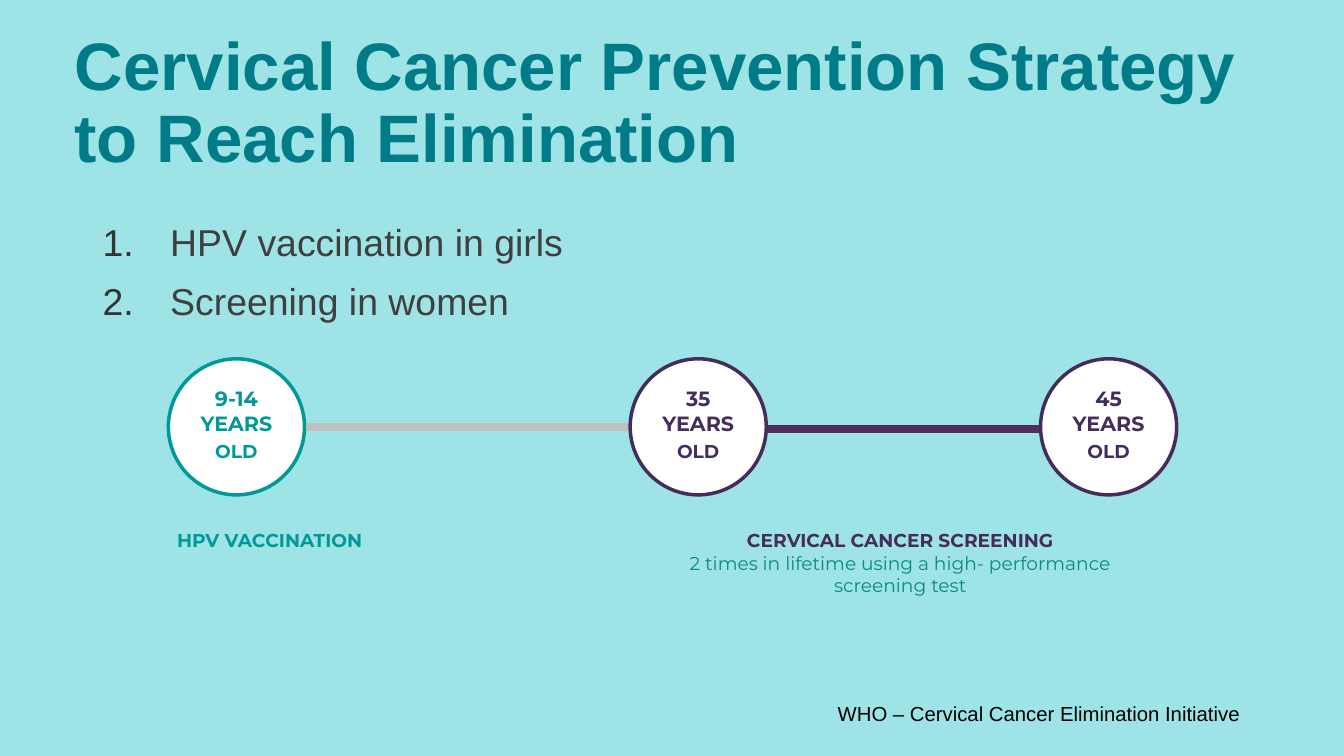
from dataclasses import dataclass

from lxml.etree import SubElement
from pptx import Presentation
from pptx.dml.color import RGBColor
from pptx.enum.shapes import MSO_CONNECTOR as Connector, MSO_SHAPE as Shape
from pptx.enum.text import MSO_ANCHOR as Anchor, PP_ALIGN as Align
from pptx.oxml.ns import qn
from pptx.util import Inches, Pt


@dataclass(frozen=True)
class Theme:
    background: str = "9EE3E5"
    title: str = "007C88"
    body: str = "3F3F3F"
    number: str = "333333"
    vaccination: str = "009999"
    screening: str = "442D5A"
    detail: str = "0B8A83"
    gap_line: str = "BFBFBF"
    screening_line: str = "512E5B"
    white: str = "FFFFFF"
    black: str = "000000"
    sans: str = "Arial"
    display: str = "Montserrat"
    title_size: float = 48
    body_size: float = 26.7
    age_size: float = 14.7
    label_size: float = 13.3
    source_size: float = 14.5


THEME = Theme()


def color(value):
    return RGBColor.from_string(value)


def text_format(name, size, ink, bold=False):
    return {"name": name, "size": Pt(size), "bold": bold, "ink": ink}


def write_lines(frame, lines, **para_format):
    """Fill a frame with (text, font format, extra paragraph format) lines."""
    frame.word_wrap = True
    frame.vertical_anchor = Anchor.TOP
    for index, (text, font_format, extra) in enumerate(lines):
        para = frame.paragraphs[0] if index == 0 else frame.add_paragraph()
        for key, value in {**para_format, **extra}.items():
            setattr(para, key, value)
        span = para.add_run()
        span.text = text
        for key, value in font_format.items():
            if key == "ink":
                span.font.color.rgb = color(value)
            else:
                setattr(span.font, key, value)


def add_text(page, box, lines, **para_format):
    frame = page.shapes.add_textbox(*map(Inches, box)).text_frame
    write_lines(frame, lines, **para_format)
    return frame


def add_title(page, box, lines):
    title = page.shapes.title
    for key, value in zip(("left", "top", "width", "height"), box):
        setattr(title, key, Inches(value))
    style = text_format(THEME.sans, THEME.title_size, THEME.title, True)
    write_lines(title.text_frame, [(line, style, {}) for line in lines],
                alignment=Align.LEFT, line_spacing=0.9)


def add_numbered_list(page, box, items):
    style = text_format(THEME.sans, THEME.body_size, THEME.body)
    frame = add_text(page, box, [
        (item, style, {"space_before": Pt(10.7 if index else 0)})
        for index, item in enumerate(items)])
    for para in frame.paragraphs:
        props = para._p.get_or_add_pPr()
        props.set("marL", str(Inches(0.67)))
        props.set("indent", str(-Inches(0.67)))
        tint = SubElement(props, qn("a:buClr"))
        SubElement(tint, qn("a:srgbClr"), val=THEME.number)
        SubElement(props, qn("a:buFont"), typeface=THEME.sans)
        SubElement(props, qn("a:buAutoNum"), type="arabicPeriod")


def add_link(page, start, end, y, ink):
    link = page.shapes.add_connector(
        Connector.STRAIGHT, *map(Inches, (start, y, end, y)))
    link.line.color.rgb = color(ink)
    link.line.width = Pt(5.5)
    SubElement(link._element.spPr, qn("a:effectLst"))


def add_age_circle(page, left, top, diameter, age, ink):
    circle = page.shapes.add_shape(
        Shape.OVAL, *map(Inches, (left, top, diameter, diameter)))
    circle.shadow.inherit = False
    circle.fill.solid()
    circle.fill.fore_color.rgb = color(THEME.white)
    circle.line.color.rgb = color(ink)
    circle.line.width = Pt(2.5)
    large = text_format(THEME.display, THEME.age_size, ink, True)
    small = text_format(THEME.display, THEME.label_size, ink, True)
    add_text(page, (left + 0.02, top + 0.22, diameter - 0.04, 0.86),
             [(age, large, {}), ("YEARS", large, {}),
              ("OLD", small, {"line_spacing": 1.2})],
             alignment=Align.CENTER)


def add_timeline(page, box):
    left, top, width, height = box
    diameter = 1.35
    middle = top + diameter / 2
    ages = [(left, "9-14", THEME.vaccination),
            (left + 4.58, "35", THEME.screening),
            (left + width - diameter, "45", THEME.screening)]
    girls, first, second = (start for start, _, _ in ages)
    add_link(page, girls + diameter, first, middle, THEME.gap_line)
    add_link(page, first + 0.96, second + 0.57, middle + 0.02,
             THEME.screening_line)
    for start, age, ink in ages:
        add_age_circle(page, start, top, diameter, age, ink)

    def label(ink, bold=True):
        return text_format(THEME.display, THEME.label_size, ink, bold)

    label_top = top + 1.64
    add_text(page, (left - 0.55, label_top, 3.11, 0.33),
             [("HPV VACCINATION", label(THEME.vaccination), {})],
             alignment=Align.CENTER)
    add_text(page, (first + 0.38, label_top, 4.6, top + height - label_top),
             [("CERVICAL CANCER SCREENING", label(THEME.screening), {}),
              ("2 times in lifetime using a high- performance screening test",
               label(THEME.detail, False), {})],
             alignment=Align.CENTER)


def add_source(page, box, text):
    style = text_format(THEME.sans, THEME.source_size, THEME.black)
    add_text(page, box, [(text, style, {})])


def build_strategy_slide(deck):
    page = deck.slides.add_slide(deck.slide_layouts[5])
    page.background.fill.solid()
    page.background.fill.fore_color.rgb = color(THEME.background)
    add_title(page, (0.64, 0.27, 12.69, 1.59),
              ["Cervical Cancer Prevention Strategy", "to Reach Elimination"])
    add_numbered_list(page, (0.92, 2.12, 5.67, 1.2),
                      ["HPV vaccination in girls", "Screening in women"])
    add_timeline(page, (1.67, 3.56, 10, 2.41))
    add_source(page, (8.21, 6.91, 5.12, 0.35),
               "WHO – Cervical Cancer Elimination Initiative")


def main():
    deck = Presentation()
    deck.slide_width, deck.slide_height = Inches(13.33), Inches(7.5)
    build_strategy_slide(deck)
    deck.save("out.pptx")


if __name__ == "__main__":
    main()
